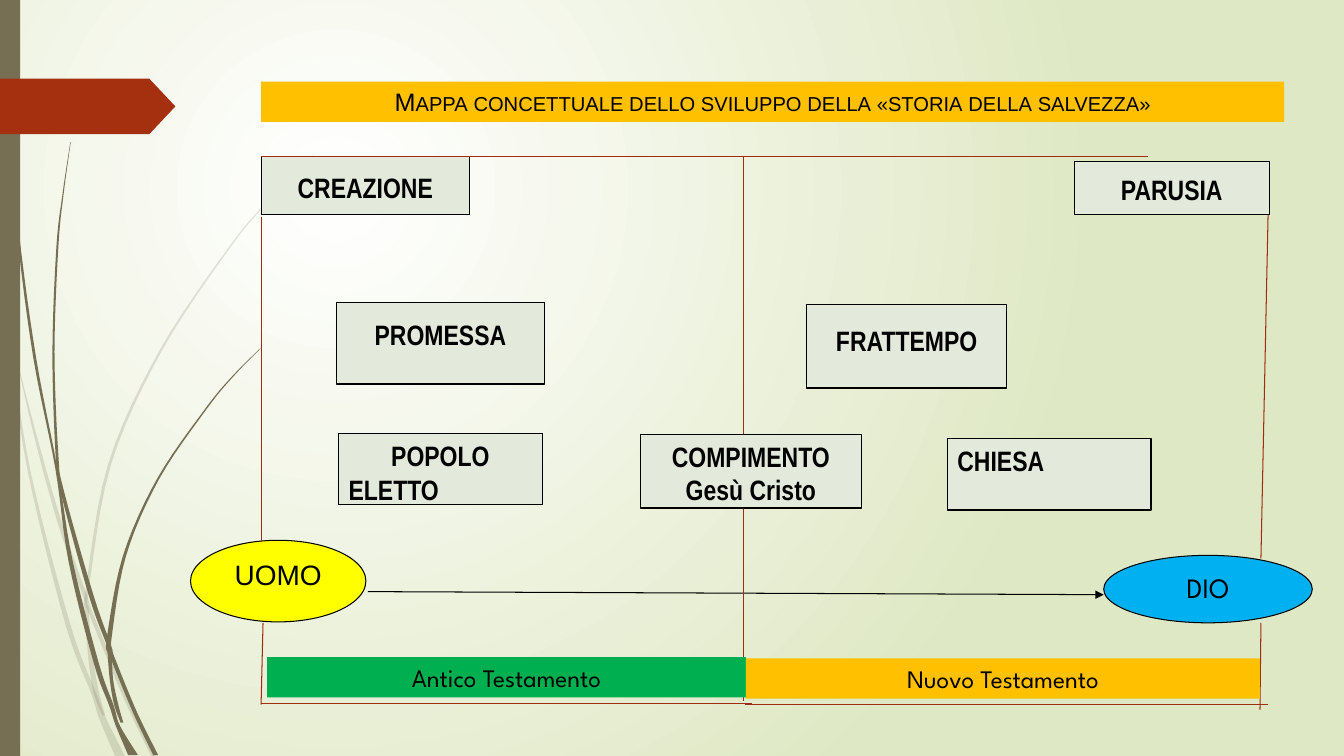
import dataclasses

import pptx
import pptx.dml.color
import pptx.enum.shapes
import pptx.enum.text
import pptx.oxml
import pptx.oxml.ns
import pptx.util

Pt = pptx.util.Pt
SHAPE = pptx.enum.shapes.MSO_SHAPE
CENTER = pptx.enum.text.PP_ALIGN.CENTER
LEFT = pptx.enum.text.PP_ALIGN.LEFT


@dataclasses.dataclass(frozen=True)
class Theme:
    """Colours, fonts and type sizes of the slide."""
    ink: str = "000000"
    glow: str = "FFFFFF"
    ground: str = "DFE8C4"
    stem: str = "766F54"
    marker: str = "A53010"
    frame: str = "9E2E0F"
    stage: str = "E3E9DB"
    gold: str = "FFC000"
    green: str = "00B050"
    yellow: str = "FFFF00"
    blue: str = "00B0F0"
    plain: str = "Arial"
    narrow: str = "Arial Narrow"
    display: str = "League Spartan"
    big: int = 20
    medium: int = 18
    hairline: float = 0.75


T = Theme()

PALE_STEMS = [
    [(0, 208.8, 2), (7.2, 249.8, 1.5), (21.2, 338.4, 2), (48.6, 446.4, 3.5),
     (67, 495.4, 3.6), (73.4, 513.4, 5), (85.7, 540, 7)],
    [(10, 248.4, 0), (26, 314, 2), (43.2, 375, 3), (61.2, 427, 3),
     (64.8, 437.8, 3), (90, 499, 3), (109.8, 540, 3.6)],
    [(224.6, 110.2, 0.3), (193, 142.2, 1), (164.5, 176, 1.2), (114.5, 251, 1.8),
     (78.1, 332.3, 2.2), (62.3, 421.2, 2.2), (62, 435.6, 3), (64.1, 465.1, 3),
     (68.4, 493.2, 4), (74.2, 511.2, 2)],
]
DARK_STEMS = [
    [(2.5, 0, 0.7), (3.2, 34.6, 0.7), (5.4, 79.2, 0.7), (13, 167.8, 1.5),
     (24.8, 255.6, 2), (40.3, 334.8, 1.5), (50.4, 400.7, 3), (68.8, 473.8, 3.6),
     (79.6, 504, 3.2), (84.2, 518.4, 3), (95, 539.3, 7)],
    [(50.4, 101.5, 0.3), (45, 139, 0.8), (41, 176.4, 1.4), (38.2, 251.3, 1.5),
     (40.7, 324.7, 2), (44.6, 351.4, 2.5), (65.2, 425.5, 3.4), (77.8, 460.8, 3),
     (80.6, 470.2, 3), (96.5, 509, 3), (111.2, 539.3, 3.6)],
    [(187.2, 247.7, 0.3), (166.3, 268.9, 1), (147.2, 292, 1.2), (113, 342, 1.6),
     (88.9, 397.1, 2.2), (78.1, 455, 3.4), (78.5, 468, 3), (79.6, 485.3, 2.4),
     (82.8, 502.6, 3), (87.1, 516.2, 2)],
]
STAGES = [
    ((0, 0, 149, 41.8), 10.5, [("CREAZIONE", CENTER)]),
    ((54, 104.4, 148.3, 58.3), 10.5, [("PROMESSA", CENTER)]),
    ((270.7, 198.7, 158.4, 52.6), 3.6, [("COMPIMENTO", CENTER), ("Gesù Cristo", CENTER)]),
    ((581, 3.6, 139, 38.2), 8.2, [("PARUSIA", CENTER)]),
    ((389.5, 105.8, 143.3, 59.8), 14, [("FRATTEMPO", CENTER)]),
    ((55.4, 198, 145.4, 51.1), 3.6, [("POPOLO", CENTER), ("ELETTO", LEFT)]),
    ((490.3, 201.6, 145.4, 51.1), 3.6, [("CHIESA", LEFT)]),
]
FRAME_LINES = [
    (0, 43.2, 0, 275.8), (1.4, 333.4, 0, 391.7), (350.6, 391, 0, 391),
    (344.9, 252, 344.9, 388.8), (719.3, 41.8, 714.2, 287.3),
    (719.3, 391.7, 345.6, 391.7), (0, 0, 633.6, 0),
    (714.2, 333.4, 713.5, 395.3), (344.9, 0, 344.9, 198.7),
]


def rgb(color):
    """Turn a hex string into a colour."""
    return pptx.dml.color.RGBColor.from_string(color)


def element(xml):
    """Parse a drawing element written without its namespace."""
    return pptx.oxml.parse_xml(xml.replace(" ", f' {pptx.oxml.ns.nsdecls("a")} ', 1))


def paint(sp, fill, line=None):
    """Give a shape its fill and outline, and no shadow."""
    sp.shadow.inherit = False
    sp.fill.solid()
    sp.fill.fore_color.rgb = rgb(fill)
    if line:
        sp.line.color.rgb = rgb(line)
        sp.line.width = Pt(T.hairline)
    else:
        sp.line.fill.background()


def add_block(s, kind, box, fill, line=None):
    """Add a painted preset shape."""
    sp = s.shapes.add_shape(kind, *map(Pt, box))
    paint(sp, fill, line)
    return sp


def write(sp, lines, font, size, bold=False, top=3.6, small_caps=False):
    """Write aligned lines of text from the top of a shape."""
    tf = sp.text_frame
    tf.word_wrap = True
    tf.vertical_anchor = pptx.enum.text.MSO_ANCHOR.TOP
    tf.margin_top = Pt(top)
    for i, (text, align) in enumerate(lines):
        p = tf.add_paragraph() if i else tf.paragraphs[0]
        p.alignment = align
        r = p.add_run()
        r.text = text
        r.font.name, r.font.size, r.font.bold = font, Pt(size), bold
        r.font.color.rgb = rgb(T.ink)
        if small_caps:
            r._r.get_or_add_rPr().set("cap", "small")


def add_line(s, x, y, ends, color, arrow=False):
    """Add a thin line from an origin, with an optional arrowhead."""
    x1, y1, x2, y2 = ends
    cx = s.shapes.add_connector(pptx.enum.shapes.MSO_CONNECTOR.STRAIGHT,
                                Pt(x + x1), Pt(y + y1), Pt(x + x2), Pt(y + y2))
    cx.line.color.rgb = rgb(color)
    cx.line.width = Pt(T.hairline)
    if arrow:
        cx.line._get_or_add_ln().append(element('<a:tailEnd type="triangle"/>'))
    cx._element.spPr.append(element("<a:effectLst />"))


def smooth(points, steps=6):
    """Return a Catmull-Rom curve through points."""
    padded = [points[0], *points, points[-1]]
    curve = []
    for a, b, c, d in zip(padded, padded[1:], padded[2:], padded[3:]):
        for t in (k / steps for k in range(steps)):
            curve.append([(2 * q + (r - p) * t + (2 * p - 5 * q + 4 * r - w) * t ** 2
                           + (3 * q - p - 3 * r + w) * t ** 3) / 2
                          for p, q, r, w in zip(a, b, c, d)])
    return curve + [points[-1]]


def add_stem(s, x, y, points, alpha=None):
    """Add a tapered stem given by centre points and widths."""
    curve = smooth(points)
    edge = [(Pt(x + cx - w / 2), Pt(y + cy)) for cx, cy, w in curve]
    edge += [(Pt(x + cx + w / 2), Pt(y + cy)) for cx, cy, w in reversed(curve)]
    builder = s.shapes.build_freeform(*edge[0])
    builder.add_line_segments(edge[1:], close=True)
    sp = builder.convert_to_shape()
    paint(sp, T.stem)
    if alpha:
        color = sp._element.spPr.find(".//" + pptx.oxml.ns.qn("a:srgbClr"))
        color.append(element(f'<a:alpha val="{alpha * 1000}"/>'))


def add_ground(s):
    """Fill the background with a radial gradient."""
    fill = s.background.fill
    fill.gradient()
    for stop, position, color in zip(fill.gradient_stops, (0, 1), (T.glow, T.ground)):
        stop.position = position
        stop.color.rgb = rgb(color)
    lin = s._element.find(".//" + pptx.oxml.ns.qn("a:lin"))
    lin.getparent().replace(lin, element(
        '<a:path path="circle"><a:fillToRect l="50000" t="50000" r="100000" b="100000"/></a:path>'))


def add_side(s, x, y, h):
    """Add the stems, the side bar and the marker."""
    for points in PALE_STEMS:
        add_stem(s, x, y, points, alpha=20)
    for points in DARK_STEMS:
        add_stem(s, x, y, points)
    add_block(s, SHAPE.RECTANGLE, (x, y, 14.4, h), T.stem)
    marker = add_block(s, SHAPE.PENTAGON, (x, y + 56.2, 125.3, 39.6), T.marker)
    marker.adjustments[0] = 0.47


def add_title(s, box):
    """Add the title band."""
    sp = add_block(s, SHAPE.RECTANGLE, box, T.gold)
    text = "Mappa concettuale dello sviluppo della «storia della salvezza»"
    write(sp, [(text, CENTER)], T.plain, T.medium, small_caps=True)


def add_map(s, x, y):
    """Add the concept map with its frame, stages, poles and eras."""
    for (left, top, w, h), inset, lines in STAGES:
        sp = add_block(s, SHAPE.RECTANGLE, (x + left, y + top, w, h), T.stage, T.ink)
        write(sp, lines, T.narrow, T.big, bold=True, top=inset)
    add_line(s, x, y, (76.3, 311, 601.9, 313.2), T.ink, arrow=True)
    for text, (left, top, w, h), fill, font in (
            ("DIO", (601.9, 285.1, 149, 48.2), T.blue, T.display),
            ("UOMO", (-50.4, 274.3, 125.3, 58.3), T.yellow, T.plain)):
        sp = add_block(s, SHAPE.OVAL, (x + left, y + top, w, h), fill, T.ink)
        write(sp, [(text, CENTER)], font, T.big)
    for ends in FRAME_LINES:
        add_line(s, x, y, ends, T.frame)
    for text, (left, top, w), fill in (
            ("Antico Testamento", (4.3, 357.8, 342), T.green),
            ("Nuovo Testamento", (346.3, 358.6, 367.2), T.gold)):
        sp = add_block(s, SHAPE.RECTANGLE, (x + left, y + top, w, 28.8), fill)
        write(sp, [(text, CENTER)], T.display, T.medium)


def main():
    """Build the slide and save it."""
    prs = pptx.Presentation()
    prs.slide_width, prs.slide_height = Pt(960), Pt(540)
    s = prs.slides.add_slide(prs.slide_layouts[6])
    add_ground(s)
    add_side(s, 0, 0, 540)
    add_title(s, (186.5, 58.3, 730.8, 28.8))
    add_map(s, 186.5, 111.6)
    prs.save("out.pptx")


if __name__ == "__main__":
    main()
